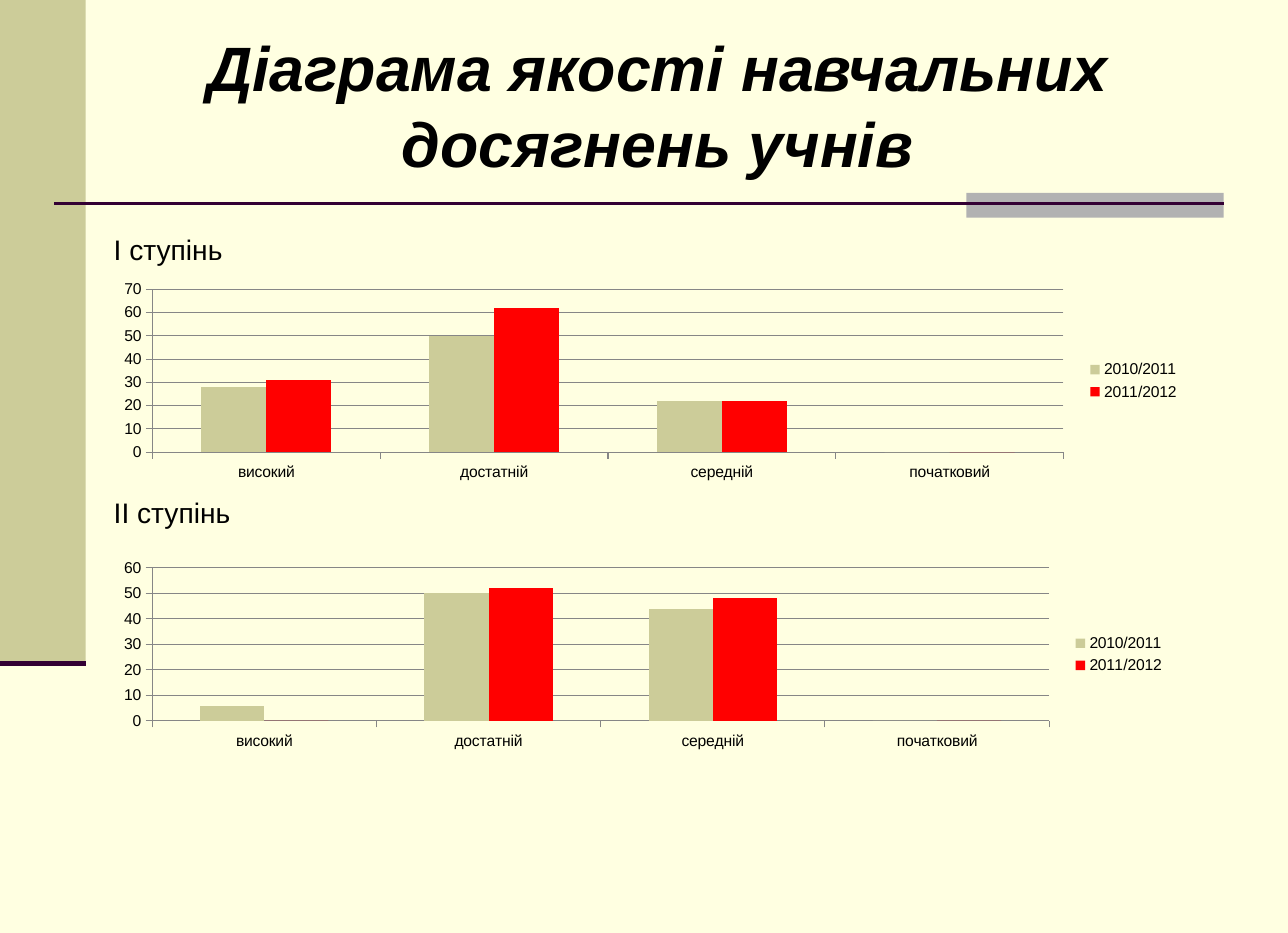
from lxml.etree import SubElement
from pptx import Presentation
from pptx.chart.data import CategoryChartData
from pptx.dml.color import RGBColor
from pptx.enum.chart import XL_CHART_TYPE as ChartType, XL_LEGEND_POSITION as LegendPosition
from pptx.enum.chart import XL_TICK_MARK as TickMark
from pptx.enum.shapes import MSO_CONNECTOR as Connector, MSO_SHAPE as Shape
from pptx.enum.text import MSO_ANCHOR as Anchor, PP_ALIGN as Align
from pptx.oxml.ns import qn
from pptx.util import Inches, Pt

WIDTH, HEIGHT = 11.42, 8.27
FONT = "Arial"
COLORS = {
    "background": "FFFFE1", "khaki": "CCCC99", "gray": "B2B2B2",
    "plum": "330033", "red": "FF0000", "text": "000000", "grid": "868686",
}
LEVELS = ["високий", "достатній", "середній", "початковий"]
YEARS = {"2010/2011": "khaki", "2011/2012": "red"}
# Heading, box of the stage, heading-to-chart offset, values by year
STAGES = [
    ("І ступінь", (0.91, 2.01, 9.65, 2.29), 0.44, [(28, 50, 22, 0), (31, 62, 22, 0)]),
    ("ІІ ступінь", (0.91, 4.34, 9.52, 2.34), 0.58, [(6, 50, 44, 0), (0, 52, 48, 0)]),
]


def color(name):
    return RGBColor.from_string(COLORS[name])


def style_font(font, size):
    font.name, font.size = FONT, Pt(size)
    font.color.rgb = color("text")


def add_block(slide, box, fill):
    block = slide.shapes.add_shape(Shape.RECTANGLE, *map(Inches, box))
    block.shadow.inherit = False
    block.fill.solid()
    block.fill.fore_color.rgb = color(fill)
    block.line.fill.background()


def add_rule(slide, left, right, y, weight):
    rule = slide.shapes.add_connector(
        Connector.STRAIGHT, Inches(left), Inches(y), Inches(right), Inches(y))
    rule.line.color.rgb = color("plum")
    rule.line.width = Pt(weight)
    SubElement(rule._element.spPr, qn("a:effectLst"))


def add_side_band(slide, box):
    left, top, width, height = box
    add_block(slide, box, "khaki")
    add_rule(slide, left, left + width, top + height, 3.5)


def add_title_rule(slide, box):
    left, top, width, height = box
    tab_width = width * 0.22
    add_block(slide, (left + width - tab_width, top, tab_width, height), "gray")
    add_rule(slide, left, left + width, top + height * 0.42, 1.5)


def add_title(slide, box):
    title = slide.shapes.title
    title.left, title.top, title.width, title.height = map(Inches, box)
    frame = title.text_frame
    frame.text = "Діаграма якості навчальних досягнень учнів"
    frame.word_wrap = True
    frame.vertical_anchor = Anchor.MIDDLE
    heading = frame.paragraphs[0]
    heading.alignment = Align.CENTER
    style_font(heading.font, 40)
    heading.font.bold = heading.font.italic = True


def style_axis(axis):
    axis.major_tick_mark = TickMark.OUTSIDE
    axis.minor_tick_mark = TickMark.NONE
    axis.format.line.color.rgb = color("grid")


def add_stage(slide, box, heading, chart_offset, values):
    """Place a stage heading with its column chart below."""
    left, top, width, height = box
    label = slide.shapes.add_textbox(*map(Inches, (left, top, 1.25, 0.4))).text_frame
    label.word_wrap = False
    label.text = heading
    style_font(label.paragraphs[0].font, 18)

    data = CategoryChartData()
    data.categories = LEVELS
    for year, year_values in zip(YEARS, values):
        data.add_series(year, year_values)
    chart_box = (left, top + chart_offset, width, height - chart_offset)
    chart = slide.shapes.add_chart(
        ChartType.COLUMN_CLUSTERED, *map(Inches, chart_box), data).chart
    style_font(chart.font, 10)
    chart.has_title = False
    chart.has_legend = True
    chart.legend.position = LegendPosition.RIGHT
    chart.legend.include_in_layout = False

    style_axis(chart.category_axis)
    style_axis(chart.value_axis)
    chart.value_axis.has_major_gridlines = True
    chart.value_axis.major_gridlines.format.line.color.rgb = color("grid")

    plot = chart.plots[0]
    plot.gap_width = 150
    plot.overlap = 0
    plot.vary_by_categories = False
    for series, fill in zip(plot.series, YEARS.values()):
        series.format.fill.solid()
        series.format.fill.fore_color.rgb = color(fill)


def main():
    deck = Presentation()
    deck.slide_width, deck.slide_height = Inches(WIDTH), Inches(HEIGHT)
    slide = deck.slides.add_slide(deck.slide_layouts.get_by_name("Title Only"))
    slide.background.fill.solid()
    slide.background.fill.fore_color.rgb = color("background")

    add_side_band(slide, (0, 0, 0.76, 5.88))
    add_title_rule(slide, (0.48, 1.71, 10.37, 0.22))
    add_title(slide, (0.67, 0.2, 10.32, 1.45))
    for heading, box, chart_offset, values in STAGES:
        add_stage(slide, box, heading, chart_offset, values)
    deck.save("out.pptx")


if __name__ == "__main__":
    main()
